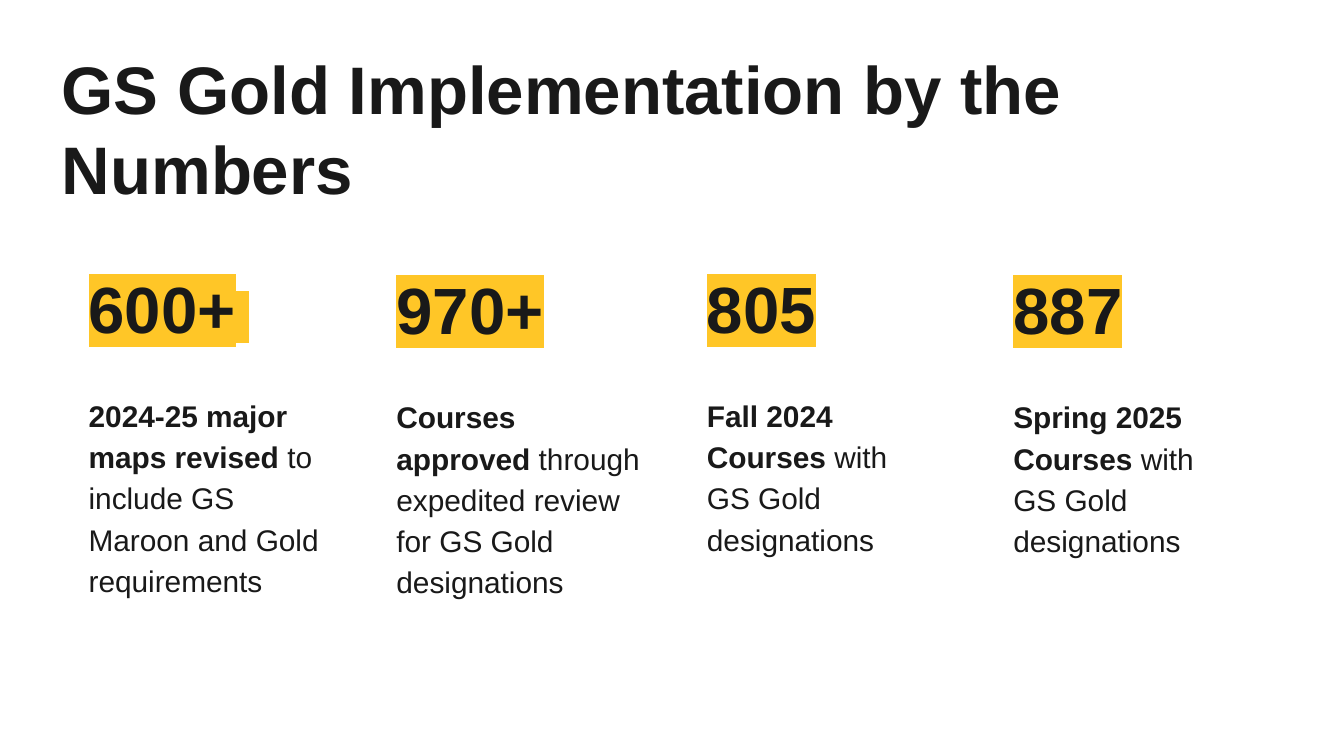
from lxml.etree import SubElement
from pptx import Presentation
from pptx.dml.color import RGBColor
from pptx.oxml.ns import qn
from pptx.util import Inches, Pt

INK = RGBColor(0x19, 0x19, 0x19)
WHITE = RGBColor(0xFF, 0xFF, 0xFF)
GOLD = RGBColor(0xFF, 0xC6, 0x27)

# left, top, body width, number runs, bold words, plain words
CARDS = [
    (0.46, 1.46, 2.04, [("600+", 35, True), (" ", 25, True)],
     "2024-25 major maps revised",
     " to include GS Maroon and Gold requirements"),
    (2.75, 1.47, 2.13, [("970+", 35, True)], "Courses approved",
     " through expedited review for GS Gold designations"),
    (5.06, 1.46, 1.92, [("805", 35, True)], "Fall 2024 Courses",
     " with GS Gold designations"),
    (7.34, 1.47, 1.83, [("887", 35, True)], "Spring 2025 Courses",
     " with GS Gold designations"),
]


def mark(font, color):
    """Highlight a run; call after its colour and before its font name."""
    light = SubElement(font._element, qn("a:highlight"))
    SubElement(light, qn("a:srgbClr"), val=str(color))


def add_text(slide, box, runs, glow=None, fill=None,
             pad=(0, 0, 0, 0), line=1.0):
    """Write runs of (text, size, bold) as one paragraph in a text box."""
    shape = slide.shapes.add_textbox(*map(Inches, box))
    if fill is not None:
        shape.fill.solid()
        shape.fill.fore_color.rgb = fill
    frame = shape.text_frame
    frame.word_wrap = True
    (frame.margin_left, frame.margin_top,
     frame.margin_right, frame.margin_bottom) = map(Inches, pad)
    para = frame.paragraphs[0]
    para.line_spacing = line
    for text, size, bold in runs:
        run = para.add_run()
        run.text = text
        font = run.font
        font.size, font.bold = Pt(size), bold
        font.color.rgb = INK
        if glow is not None:
            mark(font, glow)
        font.name = "Arial"


def add_card(slide, left, top, width, number, strong, plain):
    add_text(slide, (left, top, 2.13, 1.85), number, glow=GOLD, fill=WHITE,
             pad=(0.2, 0.77, 0.1, 0.1), line=0.9)
    add_text(slide, (left, top + 1.46, width, 1.65),
             [(strong, 16, True), (plain, 16, False)],
             pad=(0.2, 0, 0.1, 0.1), line=1.15)


def add_title(slide, box):
    add_text(slide, box, [("GS Gold Implementation by the Numbers", 36, True)])


def main():
    deck = Presentation()
    deck.slide_width = Inches(10)
    deck.slide_height = deck.slide_width * 9 // 16
    slide = deck.slides.add_slide(deck.slide_layouts[6])
    for card in CARDS:
        add_card(slide, *card)
    add_title(slide, (0.46, 0.35, 9.2, 1.2))
    deck.save("out.pptx")


if __name__ == "__main__":
    main()
